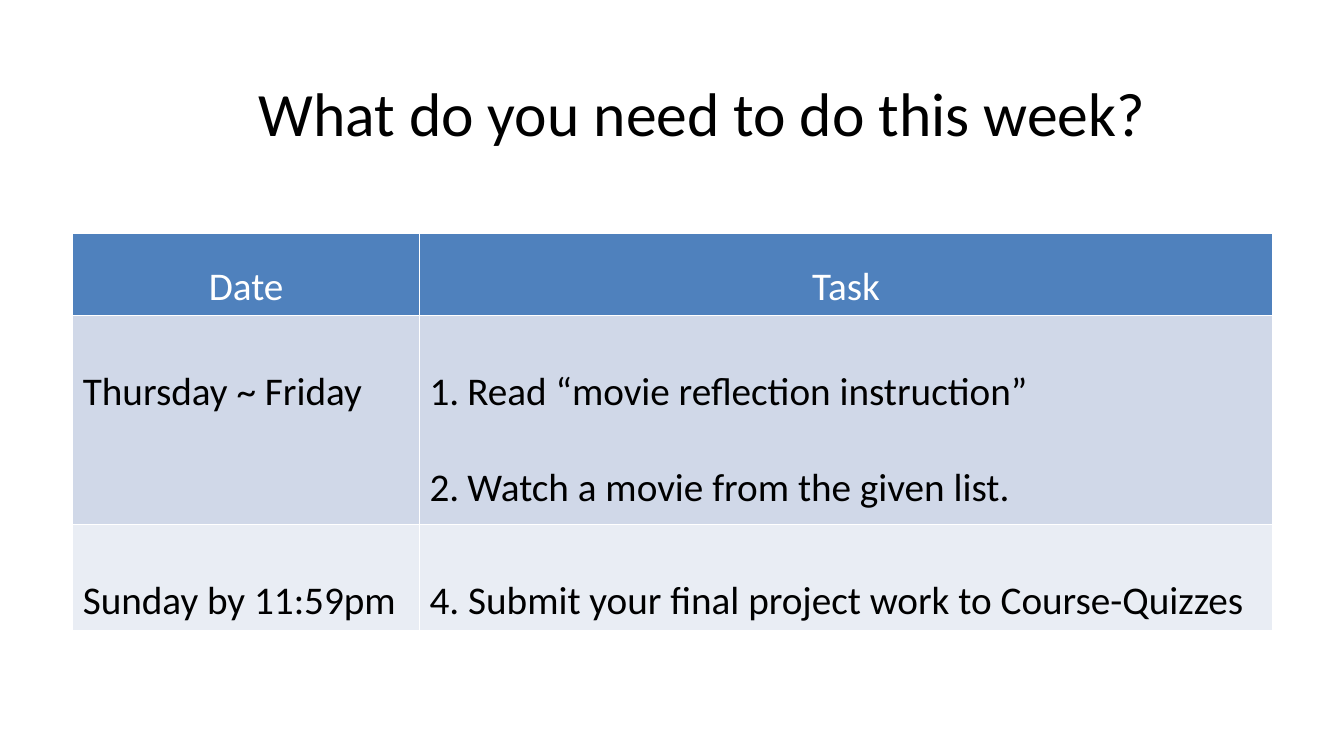
from lxml import etree
from pptx import Presentation
from pptx.dml.color import RGBColor
from pptx.enum.text import MSO_ANCHOR, PP_ALIGN
from pptx.oxml.ns import qn
from pptx.util import Pt

CENTER, LEFT = PP_ALIGN.CENTER, PP_ALIGN.LEFT
MIDDLE, TOP = MSO_ANCHOR.MIDDLE, MSO_ANCHOR.TOP

# Content: each cell is a list of paragraphs
TITLE = "What do you need to do this week?"
SCHEDULE = [
    (["Date"], ["Task"]),
    (["Thursday ~ Friday"],
     ["Read “movie reflection instruction”", "Watch a movie from the given list."]),
    (["Sunday by 11:59pm"],
     ["4. Submit your final project work to Course-Quizzes"]),
]

# Look
FONT = "Calibri"
COLORS = {"text": "000000", "header_text": "FFFFFF", "header": "4F81BD",
          "band_dark": "D0D8E8", "band_light": "E9EDF4"}
ROW_FILLS = ["header", "band_dark", "band_light"]
COLUMN_WIDTHS = [247.7, 609.3]
ROW_HEIGHTS = [58, 149, 75]
NUMBER_INDENT = 27


def style(paragraph, size, color, alignment):
    paragraph.alignment = alignment
    font = paragraph.font
    font.name, font.size, font.bold = FONT, Pt(size), False
    font.color.rgb = RGBColor.from_string(COLORS[color])


def number(paragraph):
    properties = paragraph._p.get_or_add_pPr()
    properties.set("marL", str(Pt(NUMBER_INDENT)))
    properties.set("indent", str(-Pt(NUMBER_INDENT)))
    etree.SubElement(properties, qn("a:buFont"), typeface="+mj-lt")
    etree.SubElement(properties, qn("a:buAutoNum"), type="arabicPeriod")


presentation = Presentation()
presentation.slide_width, presentation.slide_height = Pt(960), Pt(540)
slide = presentation.slides.add_slide(presentation.slide_layouts[5])

# Title
title = slide.shapes.title
title.left, title.top, title.width, title.height = Pt(125.3), Pt(22.3), Pt(753), Pt(114.5)
title.text_frame.text = TITLE
title.text_frame.vertical_anchor = MIDDLE
style(title.text_frame.paragraphs[0], 44, "text", CENTER)

# Schedule table
schedule = slide.shapes.add_table(
    len(SCHEDULE), len(COLUMN_WIDTHS), Pt(52), Pt(167),
    Pt(sum(COLUMN_WIDTHS)), Pt(sum(ROW_HEIGHTS))).table
for column, width in zip(schedule.columns, COLUMN_WIDTHS):
    column.width = Pt(width)

for r, (entries, height, fill) in enumerate(zip(SCHEDULE, ROW_HEIGHTS, ROW_FILLS)):
    schedule.rows[r].height = Pt(height)
    is_header = r == 0
    for c, lines in enumerate(entries):
        cell = schedule.cell(r, c)
        cell.fill.solid()
        cell.fill.fore_color.rgb = RGBColor.from_string(COLORS[fill])
        cell.vertical_anchor = TOP
        cell.text_frame.text = "\n".join(lines)
        for paragraph in cell.text_frame.paragraphs:
            paragraph.line_spacing = 1.5 if is_header else 2.0
            if len(lines) > 1:
                number(paragraph)
            style(paragraph, 28, "header_text" if is_header else "text",
                  CENTER if is_header else LEFT)

presentation.save("out.pptx")
